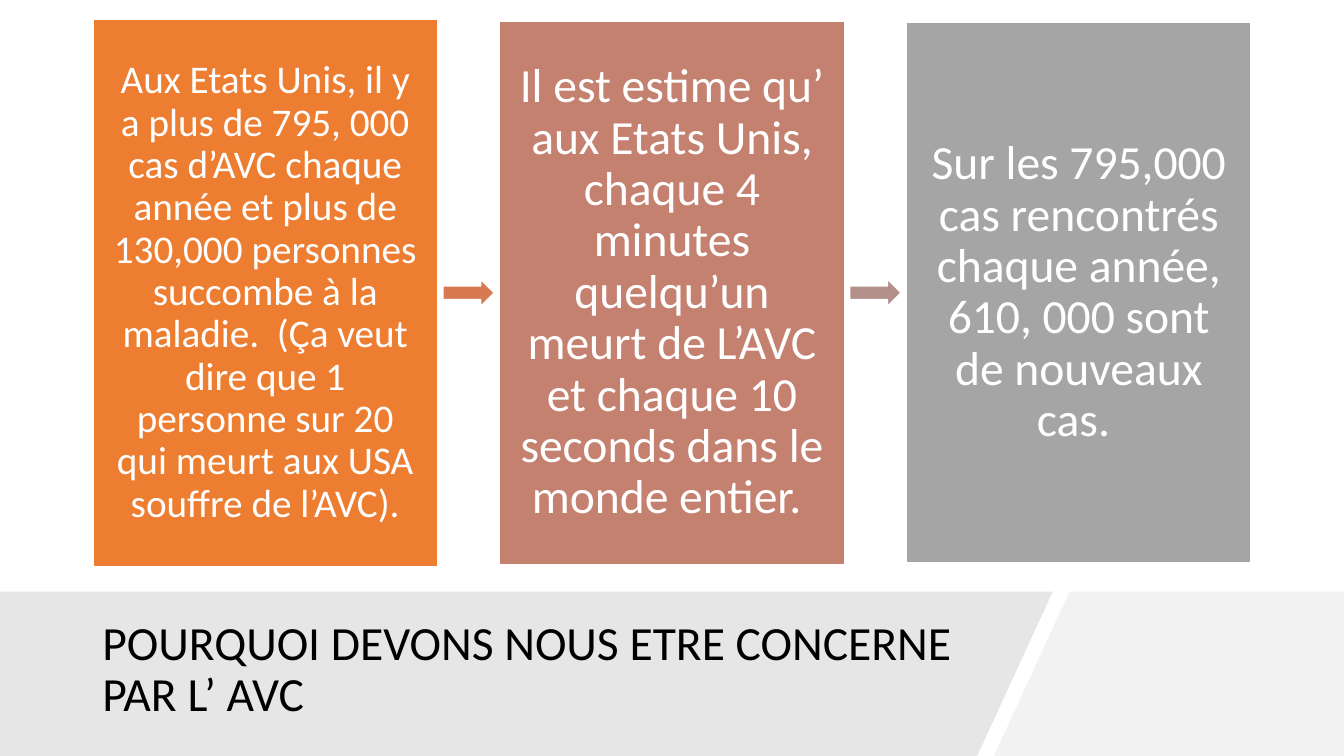
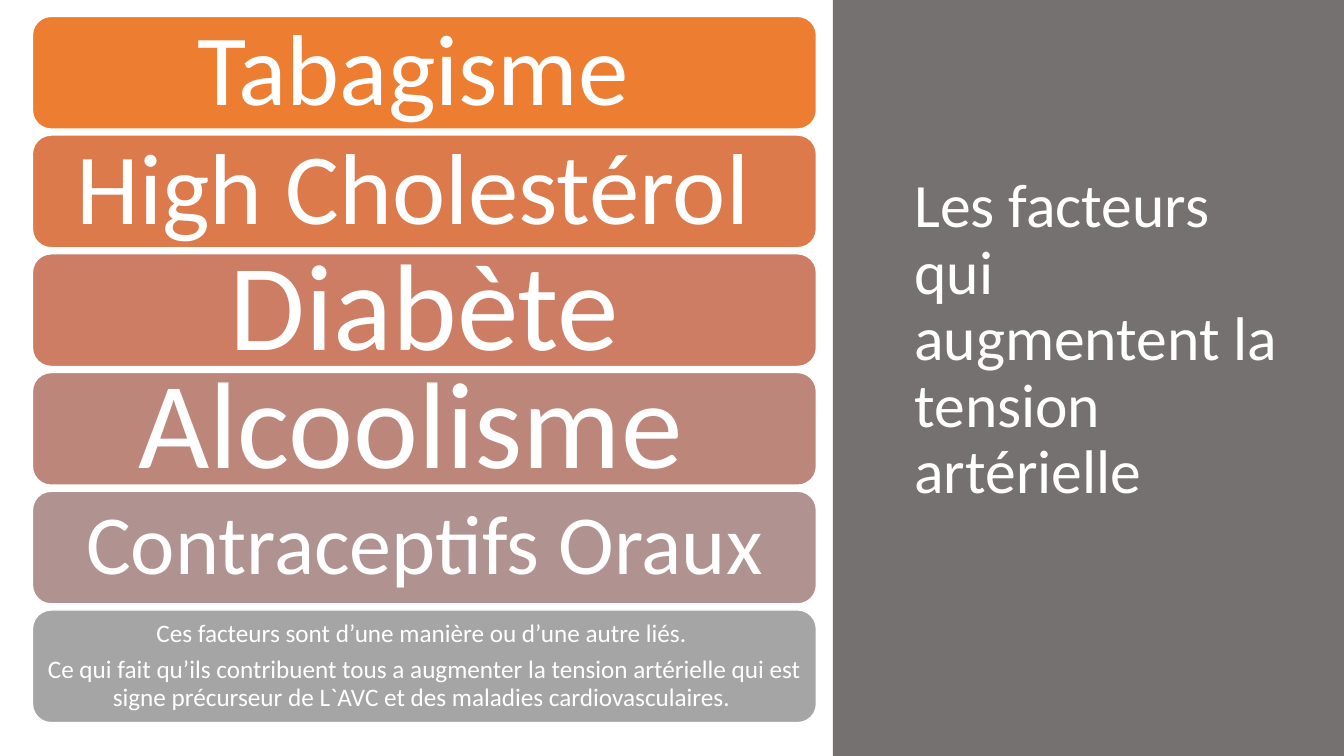
from pptx import Presentation
from pptx.dml.color import RGBColor
from pptx.enum.shapes import MSO_SHAPE
from pptx.enum.text import MSO_ANCHOR, MSO_AUTO_SIZE, PP_ALIGN
from pptx.util import Pt

RECT = MSO_SHAPE.RECTANGLE
ROUND_RECT = MSO_SHAPE.ROUNDED_RECTANGLE
RIGHT_ARROW = MSO_SHAPE.RIGHT_ARROW
LEFT, CENTER = PP_ALIGN.LEFT, PP_ALIGN.CENTER
MIDDLE = MSO_ANCHOR.MIDDLE
NO_AUTOFIT = MSO_AUTO_SIZE.NONE

FONT = "Calibri"
WIDTH, HEIGHT = 960, 540
TITLE_ONLY = 5

WHITE = RGBColor(0xFF, 0xFF, 0xFF)
BLACK = RGBColor(0x00, 0x00, 0x00)
BAND = RGBColor(0xE7, 0xE6, 0xE6)
BAND_LIGHT = RGBColor(0xF2, 0xF2, 0xF2)
PANEL = RGBColor(0x76, 0x71, 0x71)
ORANGE = RGBColor(0xED, 0x7D, 0x31)
AMBER = RGBColor(0xDC, 0x7A, 0x4B)
TERRACOTTA = RGBColor(0xCC, 0x7D, 0x64)
CLAY = RGBColor(0xBD, 0x86, 0x7B)
MAUVE = RGBColor(0xB0, 0x93, 0x91)
ROSE = RGBColor(0xC4, 0x81, 0x70)
GREY = RGBColor(0xA5, 0xA5, 0xA5)
ARROW_ORANGE = RGBColor(0xD8, 0x7A, 0x51)
ARROW_ROSE = RGBColor(0xB4, 0x90, 0x8B)


def write_text(tf, text, size, color=WHITE, align=CENTER, inset=(7.2, 3.6), after=0):
    """Fill a text frame, one paragraph per line; inset is (horizontal, vertical)."""
    tf.word_wrap = True
    tf.auto_size = NO_AUTOFIT
    tf.vertical_anchor = MIDDLE
    tf.margin_left = tf.margin_right = Pt(inset[0])
    tf.margin_top = tf.margin_bottom = Pt(inset[1])
    for i, line in enumerate(text.split("\n")):
        p = tf.add_paragraph() if i else tf.paragraphs[0]
        p.alignment = align
        p.line_spacing = 0.9
        p.space_before = Pt(0)
        p.space_after = Pt(after)
        r = p.add_run()
        r.text = line
        r.font.name = FONT
        r.font.size = Pt(size)
        r.font.color.rgb = color


class Deck:
    """Holds the presentation, its style and the current slide."""

    def __init__(self):
        self.prs = Presentation()
        self.prs.slide_width, self.prs.slide_height = Pt(WIDTH), Pt(HEIGHT)
        self.s = None

    def add_slide(self):
        self.s = self.prs.slides.add_slide(self.prs.slide_layouts[TITLE_ONLY])

    def title(self, text, x, y, w, h, size, color):
        """Place the title above everything drawn so far."""
        sp = self.s.shapes.title
        sp.left, sp.top, sp.width, sp.height = Pt(x), Pt(y), Pt(w), Pt(h)
        write_text(sp.text_frame, text, size, color, LEFT)
        self.s.shapes.element.append(sp.element)

    def style(self, sp, fill, line=None):
        sp.shadow.inherit = False
        sp.fill.solid()
        sp.fill.fore_color.rgb = fill
        if line is None:
            sp.line.fill.background()
        else:
            sp.line.color.rgb = line
            sp.line.width = Pt(1)

    def shape(self, kind, x, y, w, h, fill, line=None):
        sp = self.s.shapes.add_shape(kind, Pt(x), Pt(y), Pt(w), Pt(h))
        self.style(sp, fill, line)
        return sp

    def polygon(self, points, fill):
        start, *rest = [(Pt(x), Pt(y)) for x, y in points]
        builder = self.s.shapes.build_freeform(*start)
        builder.add_line_segments(rest, close=True)
        self.style(builder.convert_to_shape(), fill)

    def card(self, kind, x, y, w, h, fill, text, size, inset):
        sp = self.shape(kind, x, y, w, h, fill, WHITE)
        write_text(sp.text_frame, text, size, inset=inset, after=0.35 * size)


def build_concern_slide(deck):
    deck.add_slide()
    band_top = 422.6
    deck.polygon([(764, band_top), (WIDTH, band_top), (WIDTH, HEIGHT), (710, HEIGHT)],
                 BAND_LIGHT)
    deck.polygon([(0, band_top), (752, band_top), (698, HEIGHT), (0, HEIGHT)], BAND)
    deck.title("POURQUOI DEVONS NOUS ETRE CONCERNE PAR L’ AVC",
               66, 435.6, 672.5, 86.4, 34, BLACK)

    cards = [
        ("Aux Etats Unis, il y a plus de 795, 000 cas d’AVC chaque année et plus de "
         "130,000 personnes succombe à la maladie.  (Ça veut dire que 1 personne "
         "sur 20 qui meurt aux USA souffre de l’AVC).", 28, 391, ORANGE),
        ("Il est estime qu’ aux Etats Unis, chaque 4 minutes quelqu’un meurt de L’AVC "
         "et chaque 10 seconds dans le monde entier. ", 34, 388, ROSE),
        ("Sur les 795,000 cas rencontrés chaque année, 610, 000 sont de nouveaux cas. ",
         34, 386, GREY),
    ]
    left, step, card_w, middle = 66.3, 290.6, 246.2, 209.2
    arrow_w, arrow_h = 36.7, 19.4
    for i, (text, size, h, fill) in enumerate(cards):
        deck.card(RECT, left + i * step, middle - h / 2, card_w, h, fill, text, size,
                  (12.2, 12.2))
    arrow_left = left + (card_w + step - arrow_w) / 2
    for i, fill in enumerate((ARROW_ORANGE, ARROW_ROSE)):
        deck.shape(RIGHT_ARROW, arrow_left + i * step, middle - arrow_h / 2,
                   arrow_w, arrow_h, fill, WHITE)


def build_factors_slide(deck):
    deck.add_slide()
    panel_left = 595
    deck.shape(RECT, panel_left, 0, WIDTH - panel_left, HEIGHT, PANEL)
    deck.title("Les facteurs qui augmentent la tension artérielle",
               646, 26.6, 288.7, 433.4, 44, WHITE)

    factors = [
        ("Tabagisme ", 72, ORANGE),
        ("High Cholestérol ", 72, AMBER),
        ("Diabète", 88, TERRACOTTA),
        ("Alcoolisme ", 88, CLAY),
        ("Contraceptifs Oraux", 60, MAUVE),
        ("Ces facteurs sont d’une manière ou d’une autre liés. \n"
         "Ce qui fait qu’ils contribuent tous a augmenter la tension artérielle qui est "
         "signe précurseur de L`AVC et des maladies cardiovasculaires. ", 18, GREY),
    ]
    top, step = 11.7, 84.8
    for i, (text, size, fill) in enumerate(factors):
        deck.card(ROUND_RECT, 23.2, top + i * step, 560, 80.5, fill, text, size,
                  (0.3 * size, 0.15 * size))


def main():
    deck = Deck()
    build_concern_slide(deck)
    build_factors_slide(deck)
    deck.prs.save("out.pptx")


if __name__ == "__main__":
    main()
